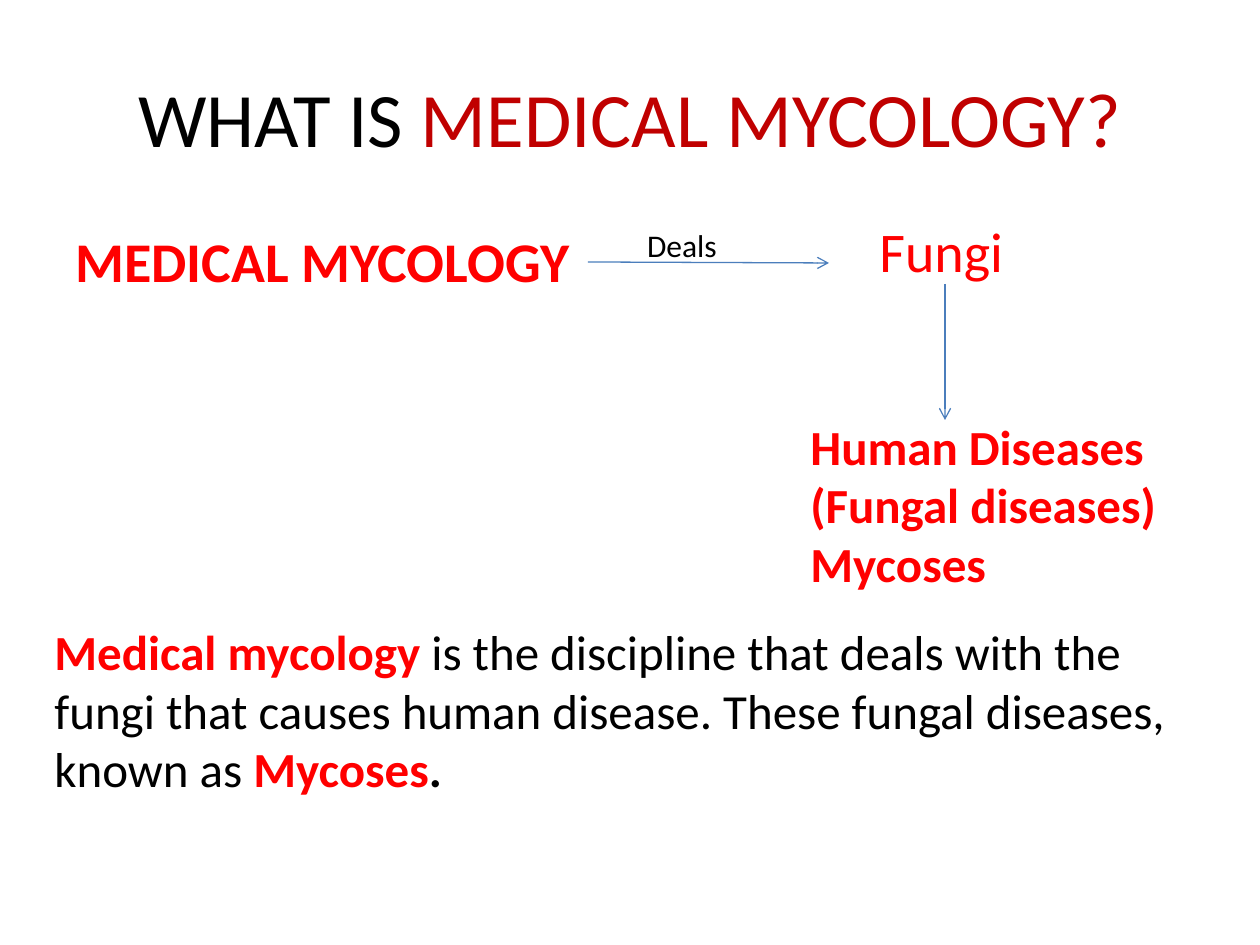
from lxml.etree import SubElement
from pptx import Presentation
from pptx.dml.color import RGBColor as RGB
from pptx.enum.shapes import MSO_CONNECTOR as LINE
from pptx.enum.text import MSO_ANCHOR as ANCHOR, PP_ALIGN as ALIGN
from pptx.oxml.ns import qn
from pptx.util import Emu, Pt

SCALE = 914400 / 126
BLACK = RGB(0, 0, 0)
RED = RGB(255, 0, 0)
DARK = RGB(0xC0, 0, 0)
BLUE = RGB(0x4B, 0x7E, 0xBC)


def px(num):
    return Emu(round(num * SCALE))


class Deck:
    font = "Calibri"

    def __init__(self, wide, high):
        self.prs = Presentation()
        self.prs.slide_width, self.prs.slide_height = px(wide), px(high)
        self.slide = self.prs.slides.add_slide(self.prs.slide_layouts[5])

    def fill(self, frame, paras, size, align):
        """Write paragraphs, each a list of (text, colour, bold) runs."""
        for num, runs in enumerate(paras):
            para = frame.add_paragraph() if num else frame.paragraphs[0]
            para.alignment = align
            for text, color, bold in runs:
                run = para.add_run()
                run.text = text
                style = {"name": self.font, "size": Pt(size), "bold": bold}
                for key, val in style.items():
                    setattr(run.font, key, val)
                run.font.color.rgb = color

    def title(self, box, runs, size):
        shape = self.slide.shapes.title
        for key, val in zip(("left", "top", "width", "height"), box):
            setattr(shape, key, px(val))
        shape.text_frame.vertical_anchor = ANCHOR.MIDDLE
        self.fill(shape.text_frame, [runs], size, ALIGN.CENTER)

    def text(self, box, paras, size, inset=None):
        frame = self.slide.shapes.add_textbox(*map(px, box)).text_frame
        frame.word_wrap = True
        if inset:
            frame.margin_left = px(inset)
        self.fill(frame, paras, size, ALIGN.LEFT)

    def arrow(self, *ends):
        link = self.slide.shapes.add_connector(LINE.STRAIGHT, *map(px, ends))
        link.line.color.rgb = BLUE
        link.line.width = Pt(0.75)
        props = link._element.spPr
        SubElement(props.find(qn("a:ln")), qn("a:tailEnd"), type="arrow")
        SubElement(props, qn("a:effectLst"))

    def save(self):
        self.prs.save("out.pptx")


def main():
    deck = Deck(1260, 945)
    deck.title((63, 38, 1134, 158),
               [("WHAT IS ", BLACK, False), ("MEDICAL MYCOLOGY?", DARK, False)], 44)
    deck.text((63, 220, 1134, 624), [[("MEDICAL MYCOLOGY", RED, True)]], 32)
    deck.arrow(588, 262, 829, 263)
    deck.text((577, 220, 220, 50), [[("Deals", BLACK, False)]], 18, inset=70)
    deck.text((867, 210, 163, 81), [[("Fungi", RED, False)]], 32)
    names = "Human Diseases", "(Fungal diseases)", "Mycoses"
    deck.text((798, 410, 420, 190), [[(name, RED, True)] for name in names], 28)
    deck.arrow(945, 284, 945, 420)
    deck.text((42, 615, 1176, 190), [[
        ("Medical mycology ", RED, True),
        ("is the discipline that deals with the fungi that causes human disease. "
         "These fungal diseases, known as ", BLACK, False),
        ("Mycoses", RED, True),
        (".", BLACK, True),
    ]], 28)
    deck.save()


if __name__ == "__main__":
    main()
